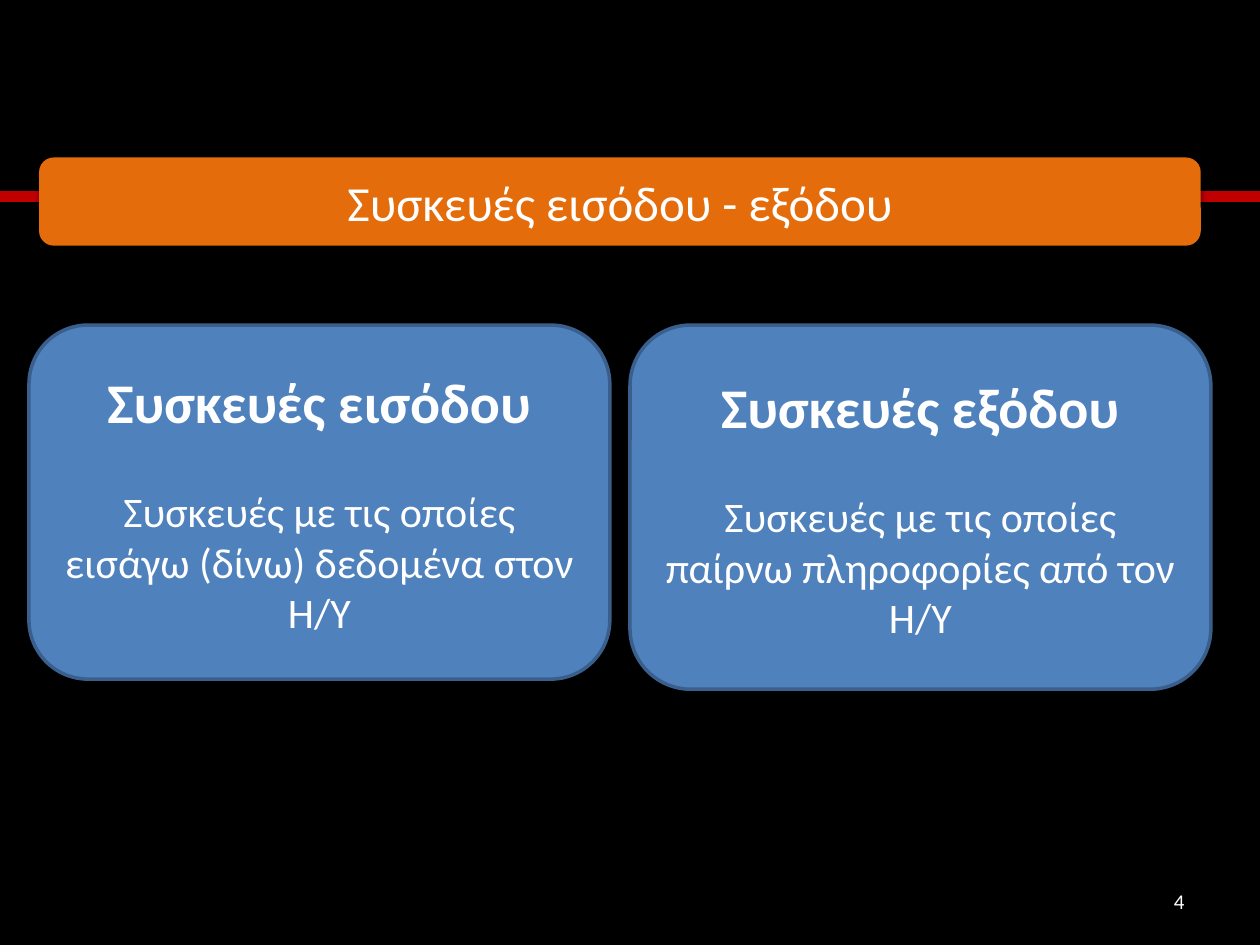
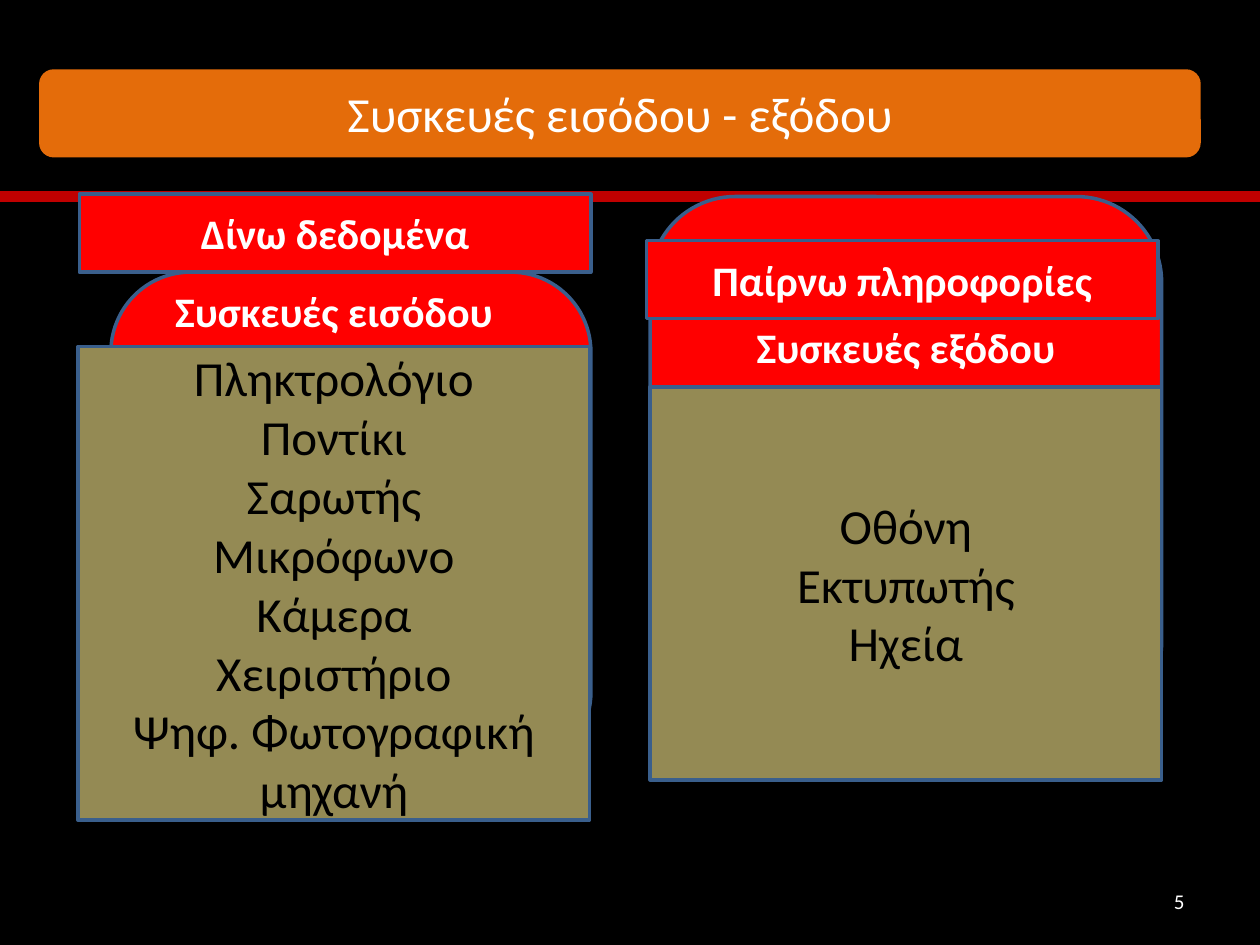
from dataclasses import dataclass

import pptx
import pptx.dml.color
import pptx.enum.shapes
import pptx.enum.text
import pptx.oxml
import pptx.oxml.ns
import pptx.presentation
import pptx.shapes.autoshape
import pptx.slide
import pptx.util
from pptx.util import Inches

COLORS = {
    "background": "000000",
    "rule": "C00000",
    "title": "E46C0A",
    "card": "4F81BD",
    "heading": "FF0000",
    "list": "948A54",
    "outline": "3A5F8C",
    "light": "FFFFFF",
    "dark": "000000",
}
FONT = "Calibri"
TITLE = "Συσκευές εισόδου - εξόδου"
DRAWING_NS = 'xmlns:a="http://schemas.openxmlformats.org/drawingml/2006/main"'
TITLE_SHADOW = (
    f'<a:effectLst {DRAWING_NS}><a:outerShdw blurRad="39400" dist="22900" '
    'dir="5400000" rotWithShape="0"><a:srgbClr val="000000">'
    '<a:alpha val="35000"/></a:srgbClr></a:outerShdw></a:effectLst>'
)
RECT = pptx.enum.shapes.MSO_SHAPE.RECTANGLE
ROUNDED = pptx.enum.shapes.MSO_SHAPE.ROUNDED_RECTANGLE
ALIGN = pptx.enum.text.PP_ALIGN
ANCHOR = pptx.enum.text.MSO_ANCHOR


@dataclass(frozen=True)
class Box:
    left: float
    top: float
    width: float
    height: float

    def lengths(self) -> tuple:
        return tuple(Inches(v) for v in (self.left, self.top, self.width, self.height))


@dataclass(frozen=True)
class Definition:
    box: Box
    term: str
    meaning: str


@dataclass(frozen=True)
class DeviceColumn:
    backdrop: Box
    action_box: Box
    action: str
    list_box: Box
    devices: tuple[str, ...]
    label_box: Box
    label: str


DEFINITIONS = (
    Definition(Box(0.23, 2.58, 4.61, 2.81), "Συσκευές εισόδου",
               "Συσκευές με τις οποίες εισάγω (δίνω) δεδομένα στον Η/Υ"),
    Definition(Box(5, 2.58, 4.61, 2.89), "Συσκευές εξόδου",
               "Συσκευές με τις οποίες παίρνω πληροφορίες από τον Η/Υ"),
)
COLUMNS = (
    DeviceColumn(
        Box(0.88, 2.16, 3.81, 3.97),
        Box(0.63, 1.54, 4.06, 0.62), "Δίνω δεδομένα",
        Box(0.62, 2.75, 4.06, 3.76),
        ("Πληκτρολόγιο", "Ποντίκι", "Σαρωτής", "Μικρόφωνο", "Κάμερα",
         "Χειριστήριο", "Ψηφ. Φωτογραφική μηχανή"),
        Box(0.62, 2.22, 4.06, 0.51), "Συσκευές εισόδου"),
    DeviceColumn(
        Box(5.16, 1.56, 4.06, 4.22),
        Box(5.13, 1.91, 4.06, 0.62), "Παίρνω πληροφορίες",
        Box(5.16, 3.07, 4.06, 3.12),
        ("Οθόνη", "Εκτυπωτής", "Ηχεία"),
        Box(5.16, 2.5, 4.06, 0.51), "Συσκευές εξόδου"),
)


def rgb(name: str) -> pptx.dml.color.RGBColor:
    return pptx.dml.color.RGBColor.from_string(COLORS[name])


def write(shape: pptx.shapes.autoshape.Shape, text: str, *, size: float,
          color: str = "light", bold: bool = False, align=ALIGN.CENTER,
          anchor=ANCHOR.MIDDLE, before: float = 0, append: bool = False):
    frame = shape.text_frame
    frame.word_wrap = True
    frame.vertical_anchor = anchor
    paragraph = frame.add_paragraph() if append else frame.paragraphs[0]
    paragraph.alignment = align
    paragraph.space_before = pptx.util.Pt(before)
    run = paragraph.add_run()
    run.text = text
    run.font.name = FONT
    run.font.size = pptx.util.Pt(size)
    run.font.bold = bold
    run.font.color.rgb = rgb(color)
    return run


def add_panel(slide: pptx.slide.Slide, box: Box, fill: str, *, kind=RECT,
              outlined: bool = True) -> pptx.shapes.autoshape.Shape:
    panel = slide.shapes.add_shape(kind, *box.lengths())
    panel.shadow.inherit = False
    panel.fill.solid()
    panel.fill.fore_color.rgb = rgb(fill)
    if outlined:
        panel.line.color.rgb = rgb("outline")
        panel.line.width = pptx.util.Pt(2)
    else:
        panel.line.fill.background()
    return panel


def add_rule(slide: pptx.slide.Slide) -> None:
    rule = slide.shapes.add_connector(
        pptx.enum.shapes.MSO_CONNECTOR.STRAIGHT,
        Inches(0), Inches(1.56), Inches(10), Inches(1.56))
    rule.line.color.rgb = rgb("rule")
    rule.line.width = pptx.util.Pt(6)
    rule._element.spPr.append(pptx.oxml.parse_xml(f"<a:effectLst {DRAWING_NS}/>"))


def add_page_number(slide: pptx.slide.Slide, number: int) -> None:
    footer = slide.shapes.add_textbox(*Box(7.17, 6.95, 2.33, 0.4).lengths())
    run = write(footer, str(number), size=12, align=ALIGN.RIGHT)._r
    field = pptx.oxml.parse_xml(
        f'<a:fld {DRAWING_NS} id="{{5B1D6C0E-3F5A-4C4B-9E0D-7A2C1F8B4D10}}" '
        'type="slidenum"/>')
    run.addprevious(field)
    field.extend(list(run))
    run.getparent().remove(run)


def add_title(slide: pptx.slide.Slide, top: float) -> None:
    title = add_panel(slide, Box(0.31, top, 9.22, 0.7), "title",
                      kind=ROUNDED, outlined=False)
    properties = title._element.spPr
    properties.replace(properties.find(pptx.oxml.ns.qn("a:effectLst")),
                       pptx.oxml.parse_xml(TITLE_SHADOW))
    write(title, TITLE, size=28)


def add_base_slide(deck: pptx.presentation.Presentation, number: int,
                   title_top: float) -> pptx.slide.Slide:
    slide = deck.slides.add_slide(deck.slide_layouts[6])
    slide.background.fill.solid()
    slide.background.fill.fore_color.rgb = rgb("background")
    add_rule(slide)
    add_page_number(slide, number)
    add_title(slide, title_top)
    return slide


def add_definition(slide: pptx.slide.Slide, definition: Definition) -> None:
    card = add_panel(slide, definition.box, "card", kind=ROUNDED)
    write(card, definition.term, size=32, bold=True)
    write(card, definition.meaning, size=24, before=29.3, append=True)


def add_device_column(slide: pptx.slide.Slide, column: DeviceColumn) -> None:
    add_panel(slide, column.backdrop, "heading", kind=ROUNDED)
    action = add_panel(slide, column.action_box, "heading")
    write(action, column.action, size=24, bold=True)
    device_list = add_panel(slide, column.list_box, "list")
    for index, device in enumerate(column.devices):
        write(device_list, device, size=28, color="dark", append=index > 0)
    label = slide.shapes.add_textbox(*column.label_box.lengths())
    write(label, column.label, size=24, bold=True, anchor=ANCHOR.TOP)


def main() -> None:
    deck = pptx.Presentation()
    deck.slide_width = Inches(10)
    deck.slide_height = Inches(7.5)

    definitions_slide = add_base_slide(deck, 4, 1.25)
    for definition in DEFINITIONS:
        add_definition(definitions_slide, definition)

    devices_slide = add_base_slide(deck, 5, 0.55)
    for column in COLUMNS:
        add_device_column(devices_slide, column)

    first_number = pptx.oxml.ns.qn("p:sldSz")
    deck.element.find(first_number).getparent().set("firstSlideNum", "4")
    deck.save("out.pptx")


if __name__ == "__main__":
    main()
